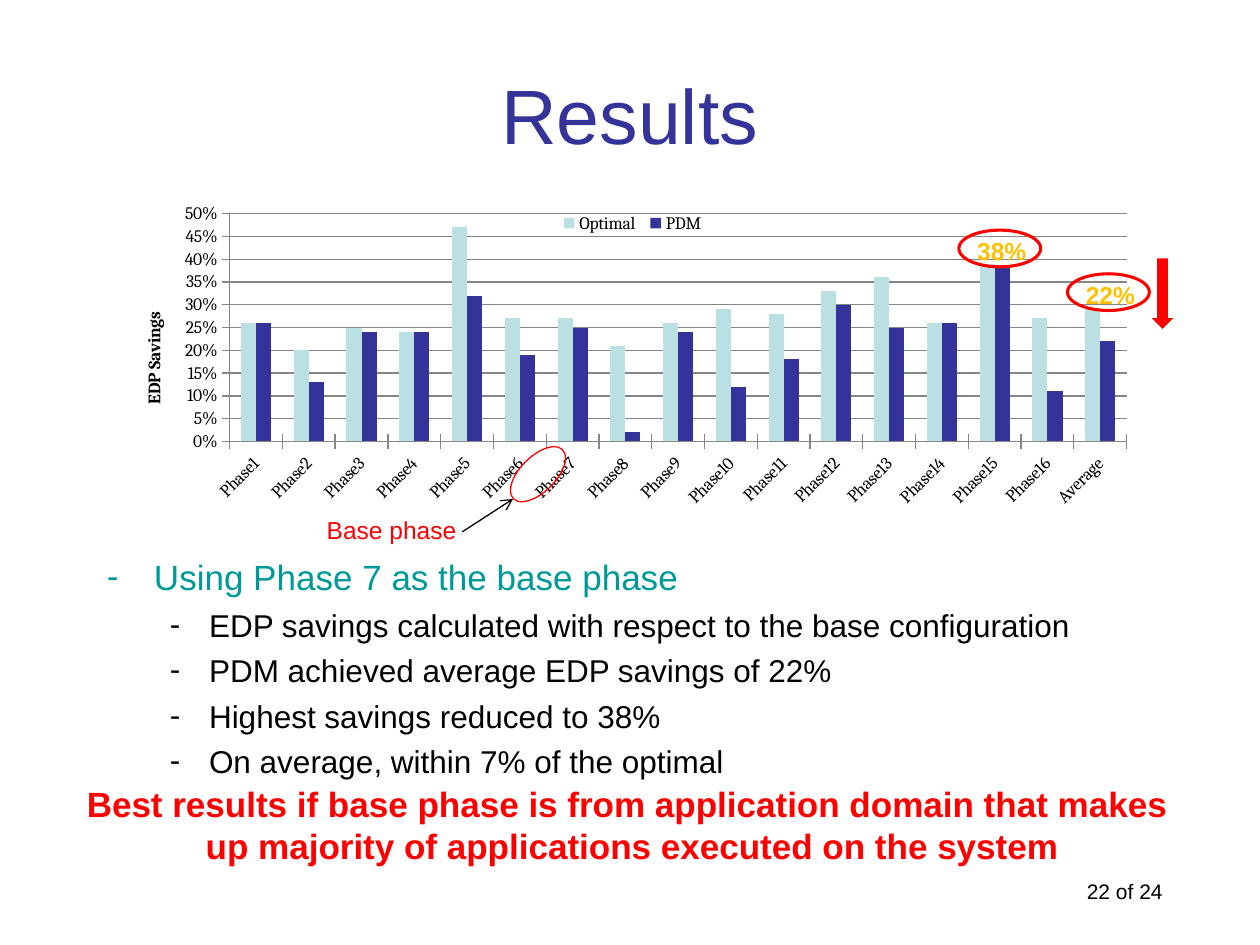
from lxml.etree import SubElement
from pptx import Presentation
from pptx.chart.data import CategoryChartData
from pptx.dml.color import RGBColor
from pptx.enum.chart import XL_CHART_TYPE, XL_LEGEND_POSITION, XL_TICK_MARK
from pptx.enum.shapes import MSO_CONNECTOR, MSO_SHAPE
from pptx.enum.text import MSO_ANCHOR, MSO_AUTO_SIZE, PP_ALIGN
from pptx.oxml import parse_xml
from pptx.oxml.ns import nsdecls, qn
from pptx.util import Cm, Pt

NAVY = RGBColor(0x33, 0x33, 0x99)
PALE_BLUE = RGBColor(0xBB, 0xE0, 0xE3)
TEAL = RGBColor(0x00, 0x99, 0x99)
RED = RGBColor(0xFF, 0x00, 0x00)
AMBER = RGBColor(0xFF, 0xC0, 0x00)
BLACK = RGBColor(0, 0, 0)
GRAY = RGBColor(0x86, 0x86, 0x86)

CATEGORIES = [f"Phase{number}" for number in range(1, 17)] + ["Average"]
SAVINGS = {
    "Optimal": (PALE_BLUE, [0.26, 0.2, 0.25, 0.24, 0.47, 0.27, 0.27, 0.21, 0.26,
                            0.29, 0.28, 0.33, 0.36, 0.26, 0.39, 0.27, 0.29]),
    "PDM": (NAVY, [0.26, 0.13, 0.24, 0.24, 0.32, 0.19, 0.25, 0.02, 0.24,
                   0.12, 0.18, 0.3, 0.25, 0.26, 0.38, 0.11, 0.22]),
}
HEADING = "Using Phase 7 as the base phase"
FINDINGS = [
    "EDP savings calculated with respect to the base configuration",
    "PDM achieved average EDP savings of 22%",
    "Highest savings reduced to 38%",
    "On average, within 7% of the optimal",
]
CONCLUSION = [
    "Best results if base phase is from application domain that makes ",
    "up majority of applications executed on the system",
]


def move(shape, left, top, width, height):
    shape.left, shape.top = Cm(left), Cm(top)
    shape.width, shape.height = Cm(width), Cm(height)


def style_font(font, size, color, name="Arial", bold=False):
    font.size, font.name, font.bold = Pt(size), name, bold
    font.color.rgb = color


def add_label(page, lines, place, size, color, bold=False, wrap=False):
    box = page.shapes.add_textbox(*map(Cm, place))
    frame = box.text_frame
    frame.word_wrap = wrap
    frame.text = "\n".join(lines)
    for para in frame.paragraphs:
        para.alignment = PP_ALIGN.CENTER
        style_font(para.font, size, color, bold=bold)


def add_ring(page, place, weight, rotation=0):
    ring = page.shapes.add_shape(MSO_SHAPE.OVAL, *map(Cm, place))
    ring.shadow.inherit = False
    ring.fill.background()
    ring.line.color.rgb = RED
    ring.line.width = Pt(weight)
    ring.rotation = rotation


def add_down_arrow(page, place):
    arrow = page.shapes.add_shape(MSO_SHAPE.DOWN_ARROW, *map(Cm, place))
    arrow.shadow.inherit = False
    arrow.fill.solid()
    arrow.fill.fore_color.rgb = RED
    arrow.line.fill.background()


def add_pointer(page, start, end):
    pointer = page.shapes.add_connector(
        MSO_CONNECTOR.STRAIGHT, *map(Cm, start + end))
    pointer.line.color.rgb = BLACK
    pointer.line.width = Pt(0.75)
    SubElement(pointer.line._get_or_add_ln(), qn("a:tailEnd"), type="arrow")
    SubElement(pointer._element.spPr, qn("a:effectLst"))


def add_bullet(para, text, level, indent, hanging, size, color):
    para.text = text
    para.level = level
    properties = para._p.get_or_add_pPr()
    properties.set("marL", str(Cm(indent)))
    properties.set("indent", str(-Cm(hanging)))
    SubElement(properties, qn("a:buFont"), typeface="Arial")
    SubElement(properties, qn("a:buChar"), char="-")
    style_font(para.font, size, color)


def set_layout(parent, index, inner=False, **fractions):
    """Place a chart part by fractions of the chart area."""
    old = parent.find(qn("c:layout"))
    if old is not None:
        parent.remove(old)
    layout = parse_xml(f"<c:layout {nsdecls('c')}/>")
    manual = SubElement(layout, qn("c:manualLayout"))
    if inner:
        SubElement(manual, qn("c:layoutTarget"), val="inner")
    for mode in ("xMode", "yMode"):
        SubElement(manual, qn(f"c:{mode}"), val="edge")
    for key, value in fractions.items():
        SubElement(manual, qn(f"c:{key}"), val=str(value))
    parent.insert(index, layout)


def style_axis(axis):
    axis.major_tick_mark = XL_TICK_MARK.CROSS
    axis.format.line.color.rgb = GRAY
    style_font(axis.tick_labels.font, 10, BLACK, "Cambria")


def add_savings_chart(page, place):
    data = CategoryChartData(number_format="0%")
    data.categories = CATEGORIES
    for name, (_, values) in SAVINGS.items():
        data.add_series(name, values)
    chart = page.shapes.add_chart(
        XL_CHART_TYPE.COLUMN_CLUSTERED, *map(Cm, place), data).chart
    chart.has_title = False
    style_font(chart.font, 10, BLACK, "Cambria")

    # Columns
    plot = chart.plots[0]
    plot.gap_width, plot.overlap = 150, 0
    plot.vary_by_categories = False
    for series in plot.series:
        series.format.fill.solid()
        series.format.fill.fore_color.rgb = SAVINGS[series.name][0]
    set_layout(chart._chartSpace.chart.plotArea, 0, inner=True,
               x=0.117, y=0.05, w=0.864, h=0.72)

    # Axes
    style_axis(chart.category_axis)
    labels = chart.category_axis._element.find(qn("c:txPr"))
    labels.find(qn("a:bodyPr")).set("rot", "-2700000")
    values = chart.value_axis
    style_axis(values)
    values.minimum_scale, values.maximum_scale = 0, 0.5
    values.major_unit = 0.05
    values.tick_labels.number_format = "0%"
    values.tick_labels.number_format_is_linked = False
    values.major_gridlines.format.line.color.rgb = GRAY
    title = values.axis_title
    title.text_frame.text = "EDP Savings"
    style_font(title.text_frame.paragraphs[0].font, 10, BLACK, "Cambria", True)
    set_layout(title._element, 1, x=0.03, y=0.35)

    # Legend over the plot
    chart.has_legend = True
    chart.legend.position = XL_LEGEND_POSITION.TOP
    chart.legend.include_in_layout = True
    style_font(chart.legend.font, 10, BLACK, "Cambria")
    set_layout(chart.legend._element, 1, x=0.43, y=0.04, w=0.15, h=0.08)


def fill_title(title):
    move(title, 1.9, 0.71, 21.59, 3.18)
    frame = title.text_frame
    frame.text = "Results"
    frame.auto_size = MSO_AUTO_SIZE.NONE
    frame.vertical_anchor = MSO_ANCHOR.MIDDLE
    frame.paragraphs[0].alignment = PP_ALIGN.CENTER
    style_font(frame.paragraphs[0].font, 44, NAVY)


def fill_body(body):
    move(body, 1.9, 11.08, 21.59, 3.99)
    frame = body.text_frame
    frame.auto_size = MSO_AUTO_SIZE.NONE
    heading = frame.paragraphs[0]
    heading.space_before = Pt(0)
    add_bullet(heading, HEADING, 0, 0.95, 0.95, 20, TEAL)
    for finding in FINDINGS:
        para = frame.add_paragraph()
        para.space_before = Pt(4.4)
        add_bullet(para, finding, 1, 2.06, 0.79, 18, BLACK)


def main():
    deck = Presentation()
    deck.slide_width, deck.slide_height = Cm(25.4), Cm(19.05)
    page = deck.slides.add_slide(deck.slide_layouts[1])

    # Title, findings and chart
    fill_title(page.shapes.title)
    fill_body(page.placeholders[1])
    add_savings_chart(page, (2.18, 3.99, 20.93, 6.38))

    # Conclusion and page number
    add_label(page, CONCLUSION, (1.42, 15.65, 22.66, 1.96), 20, RED, bold=True)
    add_label(page, ["22 of 24"], (21.06, 17.58, 3.23, 0.76), 12, BLACK, wrap=True)

    # Base phase marker
    add_ring(page, (10.49, 8.86, 0.71, 1.4), 0.75, rotation=45)
    add_pointer(page, (9.32, 10.72), (10.34, 10.06))
    add_label(page, ["Base phase"], (6.32, 10.26, 3.15, 0.86), 14, RED)

    # Highlighted savings
    add_down_arrow(page, (23.22, 5.21, 0.43, 1.42))
    for text, left, top in (("38%", 19.33, 4.64), ("22%", 21.52, 5.52)):
        add_label(page, [text], (left, top, 1.73, 0.86), 14, AMBER, True, True)
        add_ring(page, (left, top, 1.65, 0.74), 1.75)

    deck.save("out.pptx")


if __name__ == "__main__":
    main()
